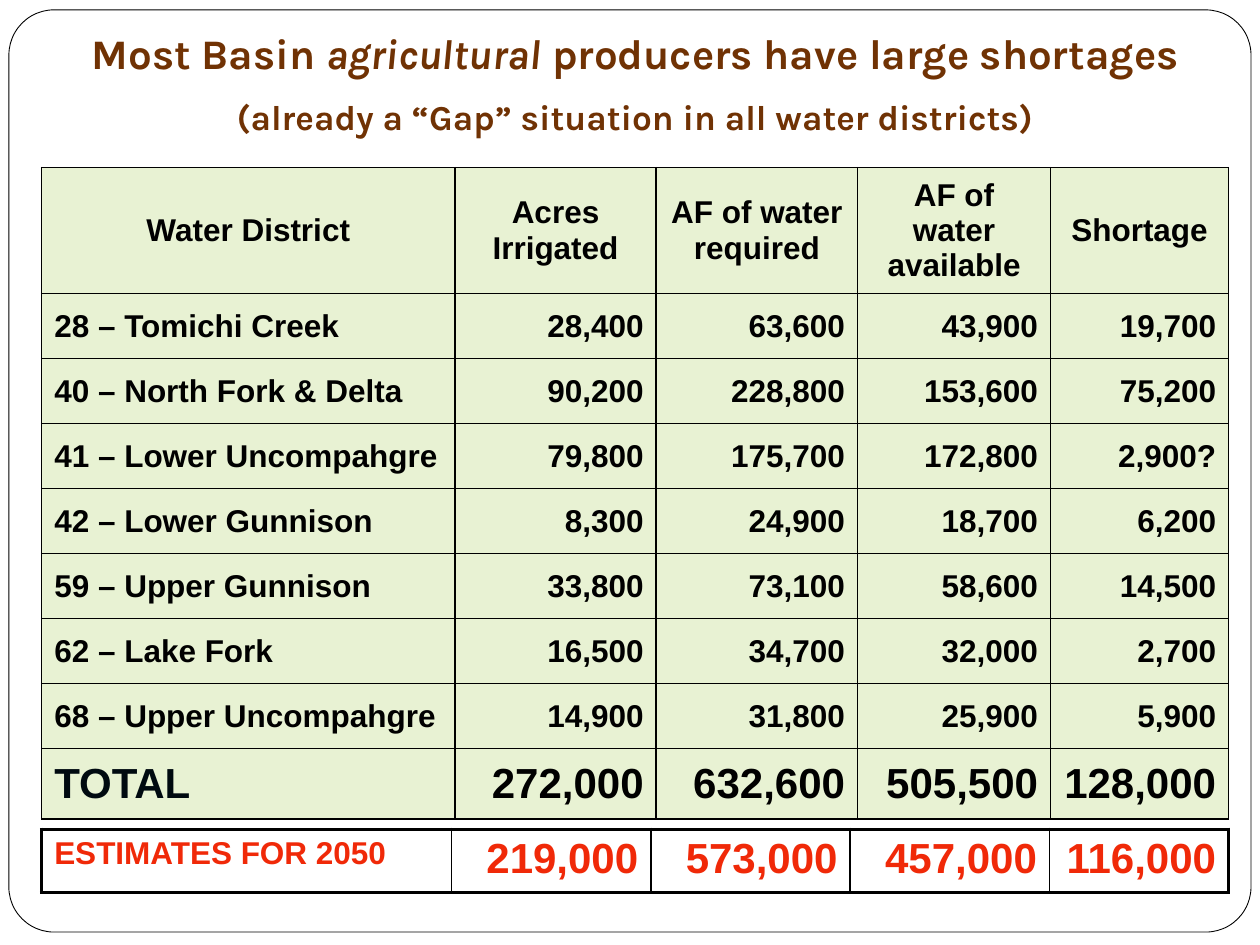
"""Build the slide on agricultural water shortages by district."""
from lxml.etree import SubElement
from pptx import Presentation
from pptx.dml.color import RGBColor
from pptx.enum.shapes import MSO_SHAPE
from pptx.enum.text import MSO_ANCHOR, PP_ALIGN
from pptx.oxml.ns import qn
from pptx.util import Cm, Pt

TITLE = [
    (24, [("Most Basin ", False), ("agricultural", True),
          (" producers have large shortages", False)]),
    (20, [("(already a “Gap” situation in all water districts)", False)]),
]
HEAD = ["Water District", "Acres Irrigated", "AF of water required",
        "AF of water available", "Shortage"]
ROWS = [
    ["28 – Tomichi Creek", "28,400", "63,600", "43,900", "19,700"],
    ["40 – North Fork & Delta", "90,200", "228,800", "153,600", "75,200"],
    ["41 – Lower Uncompahgre", "79,800", "175,700", "172,800", "2,900?"],
    ["42 – Lower Gunnison", "8,300", "24,900", "18,700", "6,200"],
    ["59 – Upper Gunnison", "33,800", "73,100", "58,600", "14,500"],
    ["62 – Lake Fork", "16,500", "34,700", "32,000", "2,700"],
    ["68 – Upper Uncompahgre", "14,900", "31,800", "25,900", "5,900"],
]
TOTAL = ["TOTAL", "272,000", "632,600", "505,500", "128,000"]
FUTURE = ["ESTIMATES FOR 2050", "219,000", "573,000", "457,000", "116,000"]
LEFT, WIDE = 0.84, 23.93
BLACK, INK, BROWN, RED = "000000", "000A10", "703204", "F02908"
WHITE, GREEN = "FFFFFF", "E8F2D3"


def color(code):
    """Turn a hex string into a colour."""
    return RGBColor.from_string(code)


def style(font, name, size, code):
    """Set a bold font in one name, size and colour."""
    font.name, font.size, font.bold = name, Pt(size), True
    font.color.rgb = color(code)


def edge(cell, side, width):
    """Draw one black border of a cell."""
    line = SubElement(cell._tc.get_or_add_tcPr(), qn("a:ln" + side),
                      w=str(Pt(width)))
    fill = SubElement(line, qn("a:solidFill"))
    SubElement(fill, qn("a:srgbClr"), val=BLACK)


def grid(slide, top, widths, heights, rows, fill, rim, anchor):
    """Add a table from rows of (text, size, colour, alignment)."""
    table = slide.shapes.add_table(
        len(rows), len(widths), Cm(LEFT), Cm(top),
        Cm(sum(widths)), Cm(sum(heights))).table
    table.first_row = table.horz_banding = False
    for col, width in zip(table.columns, widths):
        col.width = Cm(width)
    for row, height in zip(table.rows, heights):
        row.height = Cm(height)
    for i, row in enumerate(rows):
        for j, (text, size, code, align) in enumerate(row):
            cell = table.cell(i, j)
            outer = {"L": j == 0, "R": j == len(widths) - 1,
                     "T": i == 0, "B": i == len(rows) - 1}
            for side, out in outer.items():
                edge(cell, side, rim if out else 1)
            if fill:
                cell.fill.solid()
                cell.fill.fore_color.rgb = color(fill)
            else:
                cell.fill.background()
            cell.vertical_anchor = anchor
            cell.text = text
            para = cell.text_frame.paragraphs[0]
            para.alignment = align
            style(para.font, "Arial", size, code)


def record(row, sizes, codes):
    """Lay out a label and its figures, each with a size and colour."""
    label, *figures = row
    return [(label, sizes[0], codes[0], PP_ALIGN.LEFT)] + [
        (figure, sizes[1], codes[1], PP_ALIGN.RIGHT) for figure in figures]


def frame(slide):
    """Add the rounded outline of the slide."""
    shape = slide.shapes.add_shape(MSO_SHAPE.ROUNDED_RECTANGLE, Cm(0.18),
                                   Cm(0.2), Cm(25.04), Cm(18.59))
    shape.adjustments[0] = 0.049
    shape.shadow.inherit = False
    shape.fill.solid()
    shape.fill.fore_color.rgb = color(WHITE)
    shape.line.color.rgb = color(BLACK)
    shape.line.width = Pt(0.5)


def title(slide):
    """Add the two centred heading lines."""
    box = slide.shapes.add_textbox(Cm(LEFT), Cm(0.43), Cm(WIDE), Cm(2.57))
    text = box.text_frame
    text.word_wrap = True
    for i, (size, parts) in enumerate(TITLE):
        para = text.add_paragraph() if i else text.paragraphs[0]
        para.alignment = PP_ALIGN.CENTER
        if i:
            para.space_before = Pt(size / 2)
        style(para.font, "Karla", size, BROWN)
        for words, slant in parts:
            run = para.add_run()
            run.text = words
            if slant:
                run.font.italic = True


def main():
    """Build and save the slide."""
    deck = Presentation()
    deck.slide_width, deck.slide_height = Cm(25.4), Cm(19.05)
    slide = deck.slides.add_slide(deck.slide_layouts[6])
    frame(slide)
    head = [(text, 18, BLACK, PP_ALIGN.CENTER) for text in HEAD]
    body = [record(row, (18, 18), (BLACK, BLACK)) for row in ROWS]
    total = record(TOTAL, (24, 24), (INK, BLACK))
    grid(slide, 3.38, [8.33, 4.06, 4.06, 3.89, 3.59],
         [2.54] + [1.31] * len(ROWS) + [1.42],
         [head, *body, total], GREEN, 1, MSO_ANCHOR.MIDDLE)
    title(slide)
    grid(slide, 16.72, [8.26, 4.02, 4.02, 4.02, 3.61], [1.27],
         [record(FUTURE, (18, 24), (RED, RED))], None, 2.25, MSO_ANCHOR.TOP)
    deck.save("out.pptx")


if __name__ == "__main__":
    main()
